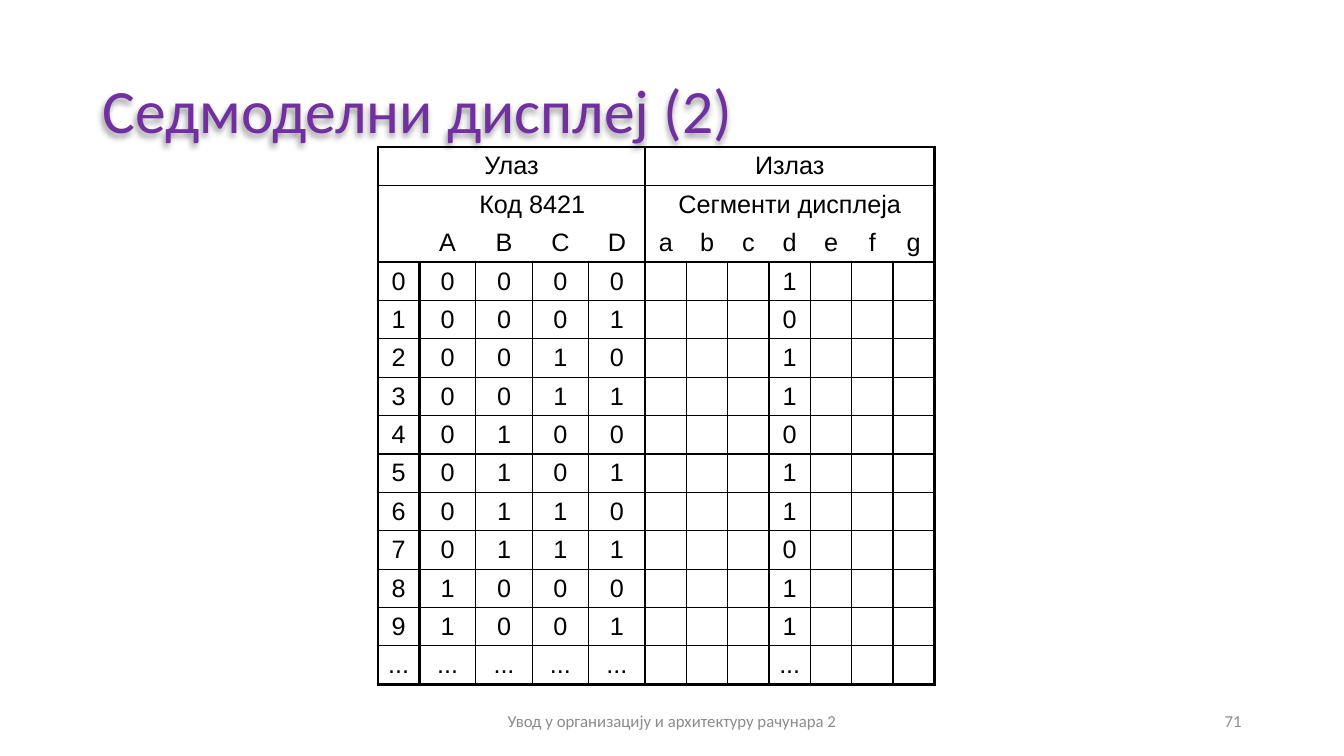
from lxml import etree
from pptx import Presentation
from pptx import util as u
from pptx.dml.color import RGBColor
from pptx.enum import text
from pptx.oxml.ns import qn

COLS, ROWS = 160, 90
BLACK, GRAY, PURPLE = "000000", "8C8C8C", "7030A0"
THIN, THICK = 1, 2.25
HEAD_ROWS = 3


def rgb(value):
    return RGBColor.from_string(value)


def child(parent, tag, **attrs):
    return etree.SubElement(parent, qn(tag), {k: str(v) for k, v in attrs.items()})


def set_all(obj, values):
    for name, value in values.items():
        setattr(obj, name, value)


class Deck:
    """Style and current slide; lengths are grid columns and rows."""

    def __init__(self, prs):
        self.dx = prs.slide_width / COLS
        self.dy = prs.slide_height / ROWS
        self.s = prs.slides.add_slide(prs.slide_layouts[5])

    def box(self, x, y, w, h):
        return [u.Emu(round(v * d)) for v, d in
                zip((x, y, w, h), (self.dx, self.dy) * 2)]

    def put_text(self, tf, value, size, color, font, align, spacing=None):
        set_all(tf, {"word_wrap": True, "vertical_anchor": text.MSO_ANCHOR.MIDDLE})
        p = tf.paragraphs[0]
        set_all(p, {"alignment": align, "line_spacing": spacing})
        set_all(p.font, {"size": u.Pt(size), "name": font})
        if value:
            r = p.add_run()
            r.text = value
            set_all(r.font, {"size": u.Pt(size), "name": font, "bold": False})
            r.font.color.rgb = rgb(color)

    def title(self, value, *place):
        sp = self.s.shapes.title
        set_all(sp, dict(zip(("left", "top", "width", "height"), self.box(*place))))
        self.put_text(sp.text_frame, value, 44, PURPLE, "Calibri",
                      text.PP_ALIGN.LEFT, 0.9)
        sp.text_frame.auto_size = text.MSO_AUTO_SIZE.NONE
        effects = child(sp._element.spPr, "a:effectLst")
        shadow = child(effects, "a:outerShdw", blurRad=u.Pt(4), dist=u.Pt(3),
                       dir=135 * 60000, algn="tr", rotWithShape=0)
        child(child(shadow, "a:srgbClr", val=BLACK), "a:alpha", val=40000)

    def label(self, value, align, *place):
        sp = self.s.shapes.add_textbox(*self.box(*place))
        self.put_text(sp.text_frame, value, 12, GRAY, "Calibri", align)

    def border(self, cell, side, width):
        ln = child(cell._tc.get_or_add_tcPr(), "a:ln" + side, w=u.Pt(width))
        if width:
            child(child(ln, "a:solidFill"), "a:srgbClr", val=BLACK)
        else:
            child(ln, "a:noFill")

    def table(self, data, spans, widths, row_height, x, y):
        n_rows, n_cols = len(data), len(widths)
        place = self.box(x, y, sum(widths), row_height * n_rows)
        table = self.s.shapes.add_table(n_rows, n_cols, *place).table
        set_all(table, {"first_row": False, "horz_banding": False})
        for col, width in zip(table.columns, widths):
            col.width = u.Emu(round(width * self.dx))
        for row in table.rows:
            row.height = u.Emu(round(row_height * self.dy))

        # Thick rules frame the blocks; the header has no inner verticals
        def vertical(r, edge):
            if edge in (0, 5, n_cols) or (edge == 1 and r >= HEAD_ROWS):
                return THICK
            return THIN if r >= HEAD_ROWS else 0

        def horizontal(edge):
            if edge in (0, HEAD_ROWS, n_rows):
                return THICK
            return 0 if edge == 2 else THIN

        margins = {"margin_left": u.Inches(0.05), "margin_right": u.Inches(0.05),
                   "margin_top": u.Inches(0.03), "margin_bottom": u.Inches(0.03)}
        for r, values in enumerate(data):
            for c, value in enumerate(values):
                cell = table.cell(r, c)
                span = spans.get((r, c), 1)
                set_all(cell, margins)
                cell.vertical_anchor = text.MSO_ANCHOR.MIDDLE
                self.put_text(cell.text_frame, value, 18, BLACK, "Arial",
                              text.PP_ALIGN.CENTER)
                for side, width in (("L", vertical(r, c)), ("R", vertical(r, c + span)),
                                    ("T", horizontal(r)), ("B", horizontal(r + 1))):
                    self.border(cell, side, width)
                cell.fill.background()
        for (r, c), span in spans.items():
            table.cell(r, c).merge(table.cell(r, c + span - 1))


def main():
    prs = Presentation()
    set_all(prs, {"slide_width": u.Inches(13.33), "slide_height": u.Inches(7.5)})
    deck = Deck(prs)

    # Title
    deck.title("Седмоделни дисплеј (2)", 11, 4.8, 138, 17.4)

    # Truth table: decimal digit, its 8421 code, segment d
    data = [
        ["Улаз"] + [""] * 4 + ["Излаз"] + [""] * 6,
        ["", "Код 8421"] + [""] * 3 + ["Сегменти дисплеја"] + [""] * 6,
        ["", *"ABCD", *"abcdefg"],
    ]
    for digit, segment in enumerate("1011011011"):
        data.append([str(digit), *f"{digit:04b}", "", "", "", segment, "", "", ""])
    data.append(["..."] * 5 + [""] * 3 + ["..."] + [""] * 3)
    spans = {(0, 0): 5, (0, 5): 7, (1, 1): 4, (1, 5): 7}
    widths = [4.92] + [6.72] * 4 + [4.92] * 7
    deck.table(data, spans, widths, 4.57, 45, 17.5)

    # Footer
    deck.label("71", text.PP_ALIGN.RIGHT, 113, 83.4, 36, 4.8)
    deck.label("Увод у организацију и архитектуру рачунара 2",
               text.PP_ALIGN.CENTER, 53, 83.4, 54, 4.8)
    prs.save("out.pptx")


if __name__ == "__main__":
    main()
